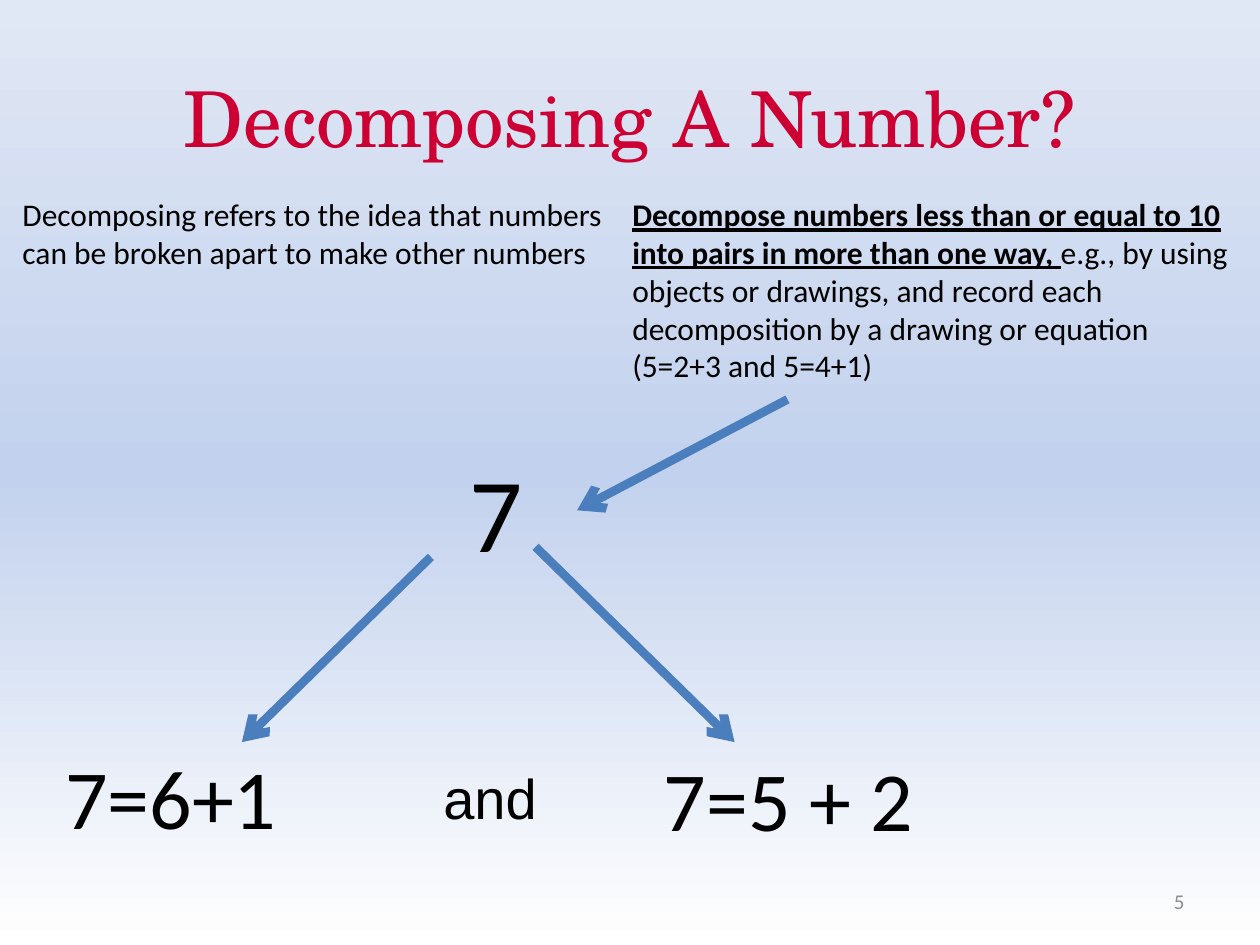
from lxml import etree
from pptx import Presentation
from pptx.dml.color import RGBColor
from pptx.enum import shapes, text
from pptx.oxml.ns import qn
from pptx.util import Inches, Pt

BLACK = "000000"
ARROW_BLUE = "4B7EBC"


def color(value):
    return RGBColor.from_string(value)


def set_background(page, stops):
    fill = page.background.fill
    fill.gradient()
    fill.gradient_angle = 90
    stop_list = page.background._cSld.find(".//" + qn("a:gsLst"))
    for old_stop in list(stop_list):
        stop_list.remove(old_stop)
    for percent, value in stops:
        stop = etree.SubElement(stop_list, qn("a:gs"), pos=str(percent * 1000))
        etree.SubElement(stop, qn("a:srgbClr"), val=value)


def style_font(font, name, size, value):
    font.name = name
    font.size = Pt(size)
    font.color.rgb = color(value)


def place(shape, left, top, width, height):
    shape.left, shape.top = Inches(left), Inches(top)
    shape.width, shape.height = Inches(width), Inches(height)


def add_title(page, words):
    title = page.shapes.title
    place(title, 0.5, 0.3, 9, 1.25)
    title.text_frame.vertical_anchor = text.MSO_ANCHOR.MIDDLE
    para = title.text_frame.paragraphs[0]
    para.text = words
    para.alignment = text.PP_ALIGN.CENTER
    style_font(para.font, "TeX Gyre Schola", 44, "CC0033")


def add_text(page, words, area, size, name="Calibri", value=BLACK):
    box = page.shapes.add_textbox(*map(Inches, area))
    box.text_frame.word_wrap = True
    para = box.text_frame.paragraphs[0]
    para.text = words
    style_font(para.font, name, size, value)
    return box


def add_standard(page, emphasis, detail, area):
    box = add_text(page, emphasis, area, 18)
    para = box.text_frame.paragraphs[0]
    para.runs[0].font.bold = True
    para.runs[0].font.underline = True
    para.add_run().text = detail


def add_slide_number(page, number):
    box = add_text(page, number, (7.17, 6.95, 2.33, 0.4), 12, value="8C8C8C")
    box.text_frame.vertical_anchor = text.MSO_ANCHOR.MIDDLE
    box.text_frame.paragraphs[0].alignment = text.PP_ALIGN.RIGHT


def add_arrow(page, start, end):
    arrow = page.shapes.add_connector(
        shapes.MSO_CONNECTOR.STRAIGHT, *map(Inches, start + end))
    arrow.line.color.rgb = color(ARROW_BLUE)
    arrow.line.width = Pt(5)
    etree.SubElement(arrow.line._get_or_add_ln(), qn("a:tailEnd"), type="arrow")
    etree.SubElement(arrow._element.spPr, qn("a:effectLst"))


def main():
    deck = Presentation()
    deck.slide_width, deck.slide_height = Inches(10), Inches(7.5)
    page = deck.slides.add_slide(deck.slide_layouts[5])
    set_background(page, [(0, "FFFFFF"), (50, "C2D1ED"), (100, "E1E8F5")])

    add_title(page, "Decomposing A Number?")
    add_text(page, "Decomposing refers to the idea that numbers can be broken "
             "apart to make other numbers", (0.08, 1.5, 5, 1.01), 18)
    add_standard(page, "Decompose numbers less than or equal to 10 into pairs "
                 "in more than one way, ",
                 "e.g., by using objects or drawings, and record each "
                 "decomposition by a drawing or equation (5=2+3 and 5=4+1)",
                 (4.92, 1.5, 5, 1.92))

    whole = add_text(page, "7", (3.25, 3.5, 1.83, 1.11), 60)
    whole.text_frame.margin_left = Inches(0.48)
    add_text(page, "7=6+1", (0.42, 5.87, 2.08, 0.91), 48)
    add_text(page, "and", (3.42, 6.01, 1.08, 0.63), 32, "Arial")
    add_text(page, "7=5 + 2", (5.17, 5.88, 2.94, 0.91), 48)

    for start, end in [((6.25, 3.17), (4.58, 4.05)),
                       ((3.42, 4.42), (1.92, 5.89)),
                       ((4.25, 4.34), (5.83, 5.89))]:
        add_arrow(page, start, end)

    add_slide_number(page, "5")
    deck.save("out.pptx")


if __name__ == "__main__":
    main()
